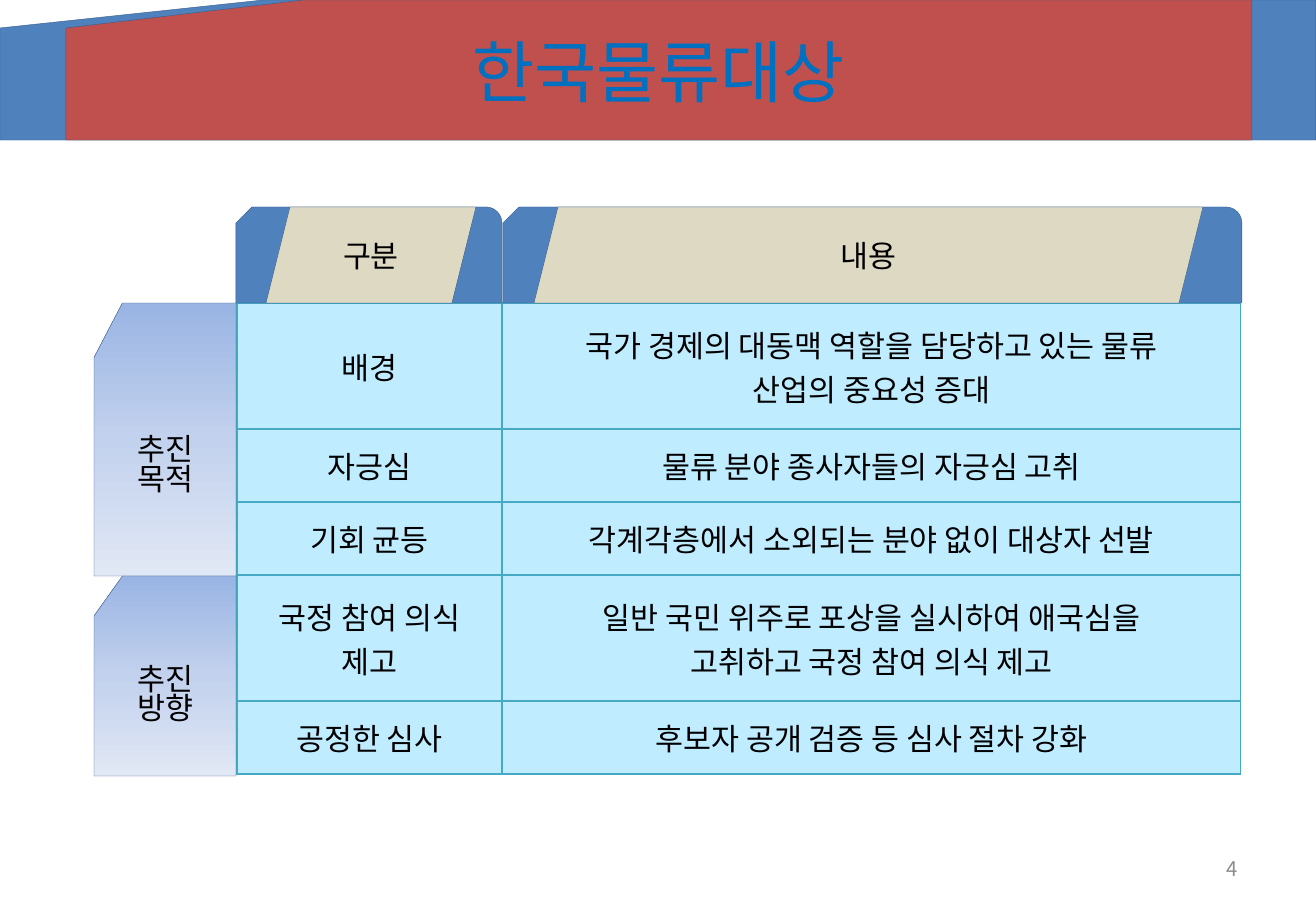
"""Build the Korean logistics award slide with its purpose and direction table."""
from copy import deepcopy
from dataclasses import dataclass

from lxml import etree
from pptx import Presentation
from pptx import util as u
from pptx.dml.color import RGBColor
from pptx.enum import shapes, text
from pptx.oxml.ns import qn

EMU_PER_PX = 7526
KIND = shapes.MSO_SHAPE
ALIGN = text.PP_ALIGN


@dataclass(frozen=True)
class Theme:
    font: str = "Noto Sans CJK KR"
    blue: str = "4F81BD"
    red: str = "C0504D"
    outline: str = "3A5F8C"
    beige: str = "DDD9C3"
    cell: str = "BFECFF"
    border: str = "46AAC5"
    title: str = "0070C0"
    ink: str = "000000"
    muted: str = "8C8C8C"
    label_stops: tuple[str, ...] = ("9AB5E4", "C2D1ED", "E1E8F5")
    title_size: int = 40
    body_size: int = 18
    number_size: int = 12
    outline_width: float = 0.25
    border_width: float = 0.75


@dataclass(frozen=True)
class Area:
    left: int
    top: int
    width: int
    height: int

    def emu(self) -> tuple[int, ...]:
        return tuple(px(n) for n in (self.left, self.top, self.width, self.height))


@dataclass(frozen=True)
class Header:
    words: str
    back: Area
    front: Area


@dataclass(frozen=True)
class Label:
    words: str
    area: Area


@dataclass(frozen=True)
class Row:
    height: int
    words: tuple[str, str]


THEME = Theme()
BARS = ((Area(0, 0, 1316, 140), THEME.blue), (Area(66, 0, 1186, 140), THEME.red))
TITLE_AREA = Area(66, 0, 1185, 140)
NUMBER_AREA = Area(943, 844, 307, 49)
TABLE_AREA = Area(237, 303, 1004, 471)
COLUMNS = (265, 739)
HEADERS = (
    Header("구분", Area(236, 207, 266, 96), Area(266, 207, 210, 96)),
    Header("내용", Area(503, 207, 739, 96), Area(534, 207, 669, 96)),
)
LABELS = (
    Label("추진\n목적", Area(94, 303, 142, 273)),
    Label("추진\n방향", Area(94, 576, 142, 200)),
)
ROWS = (
    Row(126, ("배경", "국가 경제의 대동맥 역할을 담당하고 있는 물류\n산업의 중요성 증대")),
    Row(73, ("자긍심", "물류 분야 종사자들의 자긍심 고취")),
    Row(73, ("기회 균등", "각계각층에서 소외되는 분야 없이 대상자 선발")),
    Row(126, ("국정 참여 의식\v제고", "일반 국민 위주로 포상을 실시하여 애국심을\n고취하고 국정 참여 의식 제고")),
    Row(73, ("공정한 심사", "후보자 공개 검증 등 심사 절차 강화")),
)


def px(count: int) -> int:
    return u.Emu(count * EMU_PER_PX)


def write(frame, words: str, size: int = THEME.body_size, color: str = THEME.ink,
          align=ALIGN.CENTER, spacing: float = 1.0) -> None:
    frame.text = words
    frame.word_wrap = True
    for para in frame.paragraphs:
        para.alignment = align
        para.line_spacing = spacing
        for span in para.runs:
            span.font.size = u.Pt(size)
            span.font.color.rgb = RGBColor.from_string(color)
            span.font.name = THEME.font
            props = span._r.get_or_add_rPr()
            etree.SubElement(props, qn("a:ea"), typeface=THEME.font)


def add_box(page, kind, area: Area, color: str):
    box = page.shapes.add_shape(kind, *area.emu())
    box.shadow.inherit = False
    box.fill.solid()
    box.fill.fore_color.rgb = RGBColor.from_string(color)
    box.line.color.rgb = RGBColor.from_string(THEME.outline)
    box.line.width = u.Pt(THEME.outline_width)
    box.text_frame.vertical_anchor = text.MSO_ANCHOR.MIDDLE
    return box


def add_text(page, area: Area, words: str, size: int, color: str, align) -> None:
    frame = page.shapes.add_textbox(*area.emu()).text_frame
    write(frame, words, size, color, align)
    frame.vertical_anchor = text.MSO_ANCHOR.MIDDLE


def add_header(page, header: Header) -> None:
    back = add_box(page, KIND.SNIP_ROUND_RECTANGLE, header.back, THEME.blue)
    back._element.spPr.get_or_add_xfrm().set("flipH", "1")
    front = add_box(page, KIND.PARALLELOGRAM, header.front, THEME.beige)
    write(front.text_frame, header.words)


def add_label(page, label: Label) -> None:
    box = add_box(page, KIND.FLOWCHART_CARD, label.area, THEME.label_stops[0])
    box.fill.gradient()
    box.fill.gradient_angle = 270
    stop_list = box._element.spPr.find(".//" + qn("a:gsLst"))
    stop_list.insert(1, deepcopy(stop_list[0]))
    for index, (stop, color) in enumerate(zip(box.fill.gradient_stops, THEME.label_stops)):
        stop.position = index / 2
        stop.color.rgb = RGBColor.from_string(color)
    write(box.text_frame, label.words, spacing=0.82)


def style_cell(cell) -> None:
    props = cell._tc.get_or_add_tcPr()
    for side in ("lnL", "lnR", "lnT", "lnB"):
        line = etree.SubElement(props, qn(f"a:{side}"), w=str(u.Pt(THEME.border_width)))
        fill = etree.SubElement(line, qn("a:solidFill"))
        etree.SubElement(fill, qn("a:srgbClr"), val=THEME.border)
    cell.fill.solid()
    cell.fill.fore_color.rgb = RGBColor.from_string(THEME.cell)
    cell.vertical_anchor = text.MSO_ANCHOR.MIDDLE


def add_award_table(page) -> None:
    table = page.shapes.add_table(len(ROWS), len(COLUMNS), *TABLE_AREA.emu()).table
    table.first_row = False
    table.horz_banding = False
    for column, width in zip(table.columns, COLUMNS):
        column.width = px(width)
    for table_row, row in zip(table.rows, ROWS):
        table_row.height = px(row.height)
        for cell, words in zip(table_row.cells, row.words):
            style_cell(cell)
            write(cell.text_frame, words)


def main() -> None:
    deck = Presentation()
    deck.slide_width, deck.slide_height = px(1316), px(911)
    page = deck.slides.add_slide(deck.slide_layouts[6])
    for area, color in BARS:
        add_box(page, KIND.FLOWCHART_CARD, area, color)
    add_text(page, TITLE_AREA, "한국물류대상", THEME.title_size, THEME.title, ALIGN.CENTER)
    add_award_table(page)
    add_text(page, NUMBER_AREA, "4", THEME.number_size, THEME.muted, ALIGN.RIGHT)
    for header in HEADERS:
        add_header(page, header)
    for label in LABELS:
        add_label(page, label)
    deck.save("out.pptx")


if __name__ == "__main__":
    main()
